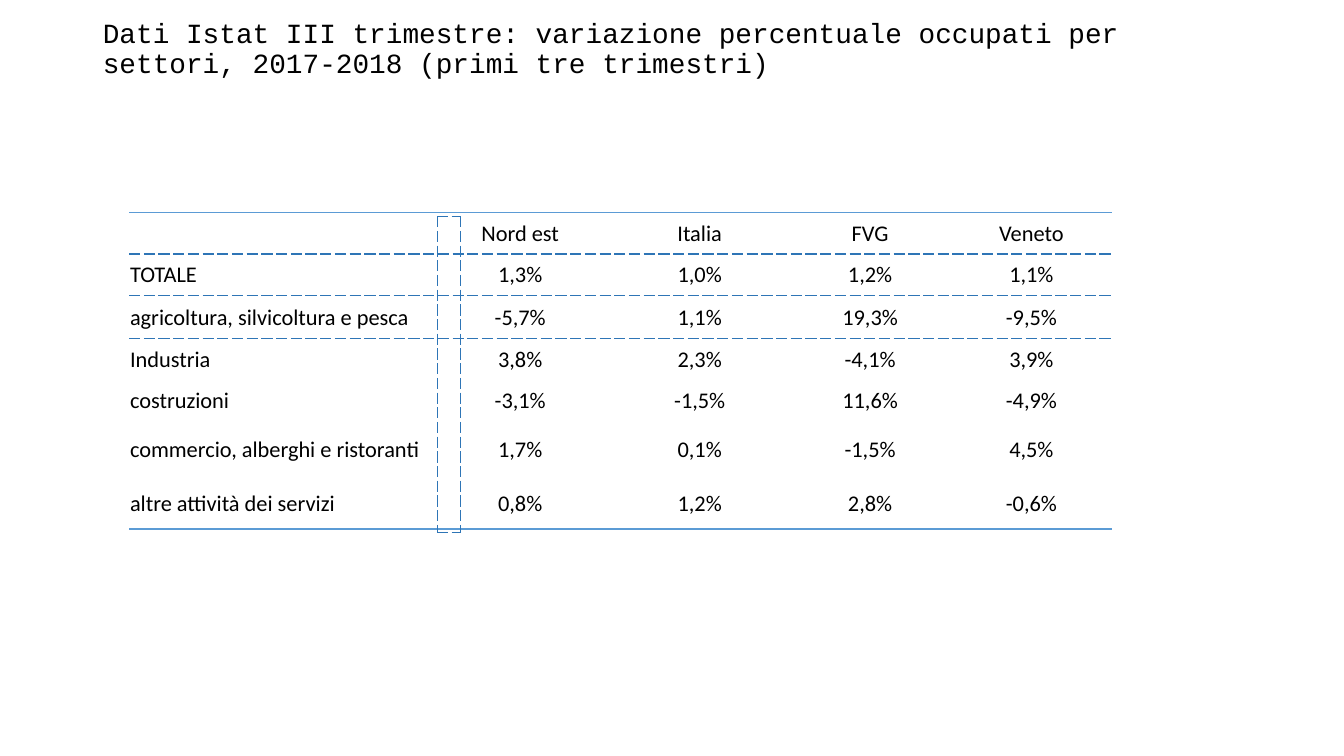
from lxml import etree
from pptx import Presentation
from pptx import util as u
from pptx.dml import color
from pptx.enum import text
from pptx.oxml import ns

BLUE, LIGHT_BLUE, BLACK = "2E75B6", "5B9BD5", "000000"
NO_GRID_STYLE = "{2D5ABB26-0587-4C30-8999-92F81FD0307C}"


def rgb(value):
    return color.RGBColor.from_string(value)


class SlideBuilder:
    title_font, body_font = "Courier New", "Calibri"
    title_size, body_size = 19.8, 16

    def __init__(self, presentation):
        self.slide = presentation.slides.add_slide(presentation.slide_layouts[5])

    def add_run(self, paragraph, wording, font, size):
        run = paragraph.add_run()
        run.text = wording
        run.font.name, run.font.size = font, u.Pt(size)
        run.font.color.rgb = rgb(BLACK)

    def title(self, left, top, width, height, wording):
        shape = self.slide.shapes.title
        shape.left, shape.top = u.Inches(left), u.Inches(top)
        shape.width, shape.height = u.Inches(width), u.Inches(height)
        frame = shape.text_frame
        frame.word_wrap = True
        frame.auto_size = text.MSO_AUTO_SIZE.NONE
        frame.vertical_anchor = text.MSO_ANCHOR.MIDDLE
        paragraph = frame.paragraphs[0]
        paragraph.alignment = text.PP_ALIGN.LEFT
        paragraph.line_spacing = 0.9
        self.add_run(paragraph, wording, self.title_font, self.title_size)

    def border(self, cell, side, line_color, dash):
        properties = cell._tc.get_or_add_tcPr()
        line = etree.SubElement(properties, ns.qn(f"a:ln{side}"), w=str(u.Pt(1)))
        fill = etree.SubElement(line, ns.qn("a:solidFill"))
        etree.SubElement(fill, ns.qn("a:srgbClr"), val=line_color)
        etree.SubElement(line, ns.qn("a:prstDash"), val=dash)

    def table(self, left, top, widths, heights, rows, borders):
        """borders maps a row number to its (side, colour, dash) lines."""
        frame = self.slide.shapes.add_table(
            len(heights), len(widths), u.Inches(left), u.Inches(top),
            u.Inches(sum(widths)), u.Inches(sum(heights)))
        table = frame.table
        table.first_row = table.horz_banding = False
        table._tbl.tblPr.find(ns.qn("a:tableStyleId")).text = NO_GRID_STYLE
        for column, width in zip(table.columns, widths):
            column.width = u.Inches(width)
        for index, (row, height) in enumerate(zip(table.rows, heights)):
            row.height = u.Inches(height)
            for position, (cell, wording) in enumerate(zip(row.cells, rows[index])):
                for line in borders.get(index, []):
                    self.border(cell, *line)
                self.fill_cell(cell, wording, centred=position > 0)

    def fill_cell(self, cell, wording, centred):
        cell.fill.background()
        cell.margin_left = cell.margin_right = cell.margin_top = u.Inches(0.01)
        cell.margin_bottom = 0
        cell.vertical_anchor = text.MSO_ANCHOR.MIDDLE
        paragraph = cell.text_frame.paragraphs[0]
        paragraph.alignment = text.PP_ALIGN.CENTER if centred else text.PP_ALIGN.LEFT
        if wording:
            self.add_run(paragraph, wording, self.body_font, self.body_size)


def main():
    presentation = Presentation()
    presentation.slide_width = u.Inches(13.33)
    presentation.slide_height = u.Inches(7.5)
    builder = SlideBuilder(presentation)

    # Title
    builder.title(0.92, 0.18, 11.5, 0.62,
                  "Dati Istat III trimestre: variazione percentuale occupati "
                  "per settori, 2017-2018 (primi tre trimestri)")

    # Employment change by sector and area
    sectors = [
        ["", "Nord est", "Italia", "FVG", "Veneto"],
        ["TOTALE", "1,3%", "1,0%", "1,2%", "1,1%"],
        ["agricoltura, silvicoltura e pesca", "-5,7%", "1,1%", "19,3%", "-9,5%"],
        ["Industria", "3,8%", "2,3%", "-4,1%", "3,9%"],
        ["costruzioni", "-3,1%", "-1,5%", "11,6%", "-4,9%"],
        ["commercio, alberghi e ristoranti", "1,7%", "0,1%", "-1,5%", "4,5%"],
        ["altre attività dei servizi", "0,8%", "1,2%", "2,8%", "-0,6%"],
    ]
    sector_borders = {
        0: [("T", LIGHT_BLUE, "solid"), ("B", BLUE, "dash")],
        1: [("T", BLUE, "dash"), ("B", BLUE, "dash")],
        2: [("T", BLUE, "dash")],
        6: [("B", LIGHT_BLUE, "solid")],
    }
    builder.table(1.28, 2.11, [2.99, 1.78, 1.78, 1.6, 1.6],
                  [0.41, 0.41, 0.43, 0.41, 0.41, 0.56, 0.51],
                  sectors, sector_borders)

    # Dashed divider between sectors and values
    builder.table(4.34, 2.15, [0.23], [3.13], [[""]],
                  {0: [(side, BLUE, "dash") for side in "LRTB"]})

    presentation.save("out.pptx")


if __name__ == "__main__":
    main()
